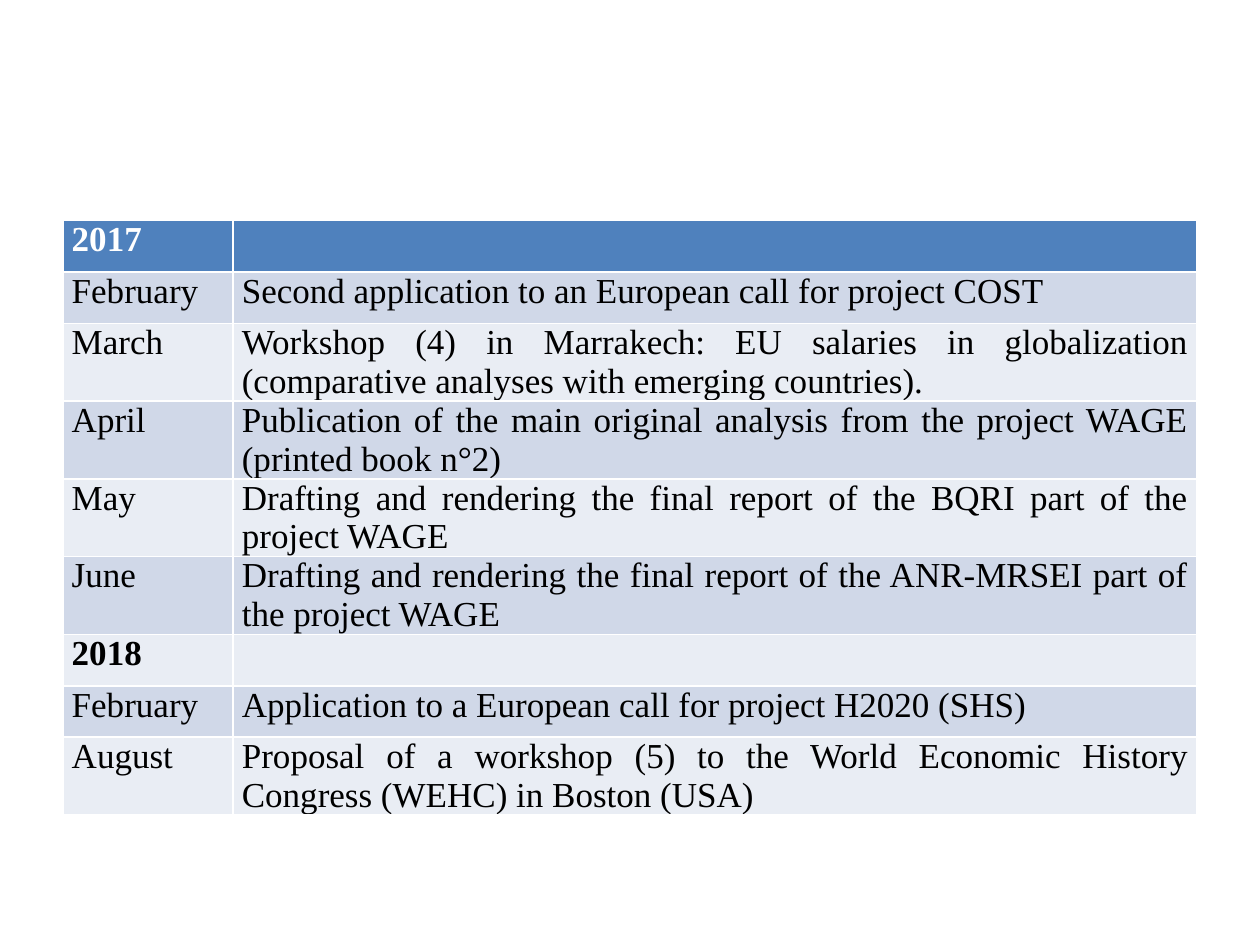
from pptx import Presentation
from pptx.dml.color import RGBColor
from pptx.enum.text import PP_ALIGN
from pptx.util import Pt

WHITE = RGBColor(0xFF, 0xFF, 0xFF)
BLACK = RGBColor(0x00, 0x00, 0x00)
BLUE = RGBColor(0x4F, 0x81, 0xBD)
BANDS = RGBColor(0xE9, 0xED, 0xF4), RGBColor(0xD0, 0xD8, 0xE8)
FONT = "Times New Roman"
COL_WIDTHS = 97.2, 550.8
ROW_HEIGHT = 29.4

SCHEDULE = [
    ("2017", ""),
    ("February", "Second application to an European call for project COST"),
    ("March", "Workshop (4) in Marrakech: EU salaries in globalization "
              "(comparative analyses with emerging countries)."),
    ("April", "Publication of the main original analysis from the project WAGE "
              "(printed book n°2)"),
    ("May", "Drafting and rendering the final report of the BQRI part of the "
            "project WAGE"),
    ("June", "Drafting and rendering the final report of the ANR-MRSEI part of "
             "the project WAGE"),
    ("2018", ""),
    ("February", "Application to a European call for project H2020 (SHS)"),
    ("August", "Proposal of a workshop (5) to the World Economic History "
               "Congress (WEHC) in Boston (USA)"),
]


def fill_cell(cell, text, fill, color, bold):
    cell.fill.solid()
    cell.fill.fore_color.rgb = fill
    if not text:
        return
    cell.margin_left = cell.margin_right = Pt(5)
    cell.margin_top = cell.margin_bottom = Pt(0)
    p = cell.text_frame.paragraphs[0]
    p.text = text
    p.alignment = PP_ALIGN.JUSTIFY
    font = p.runs[0].font
    font.name = FONT
    font.size = Pt(20)
    font.bold = bold
    font.color.rgb = color


def add_schedule(s):
    table = s.shapes.add_table(
        len(SCHEDULE), len(COL_WIDTHS), Pt(36), Pt(126),
        Pt(sum(COL_WIDTHS)), Pt(ROW_HEIGHT * len(SCHEDULE))).table
    for column, width in zip(table.columns, COL_WIDTHS):
        column.width = Pt(width)
    for i, (row, texts) in enumerate(zip(table.rows, SCHEDULE)):
        row.height = Pt(ROW_HEIGHT)
        fill, color = (BANDS[i % 2], BLACK) if i else (BLUE, WHITE)
        for cell, text in zip(row.cells, texts):
            fill_cell(cell, text, fill, color, text.isdigit())


def main():
    prs = Presentation()
    prs.slide_width, prs.slide_height = Pt(720), Pt(540)
    s = prs.slides.add_slide(prs.slide_layouts[6])
    add_schedule(s)
    prs.save("out.pptx")


if __name__ == "__main__":
    main()
